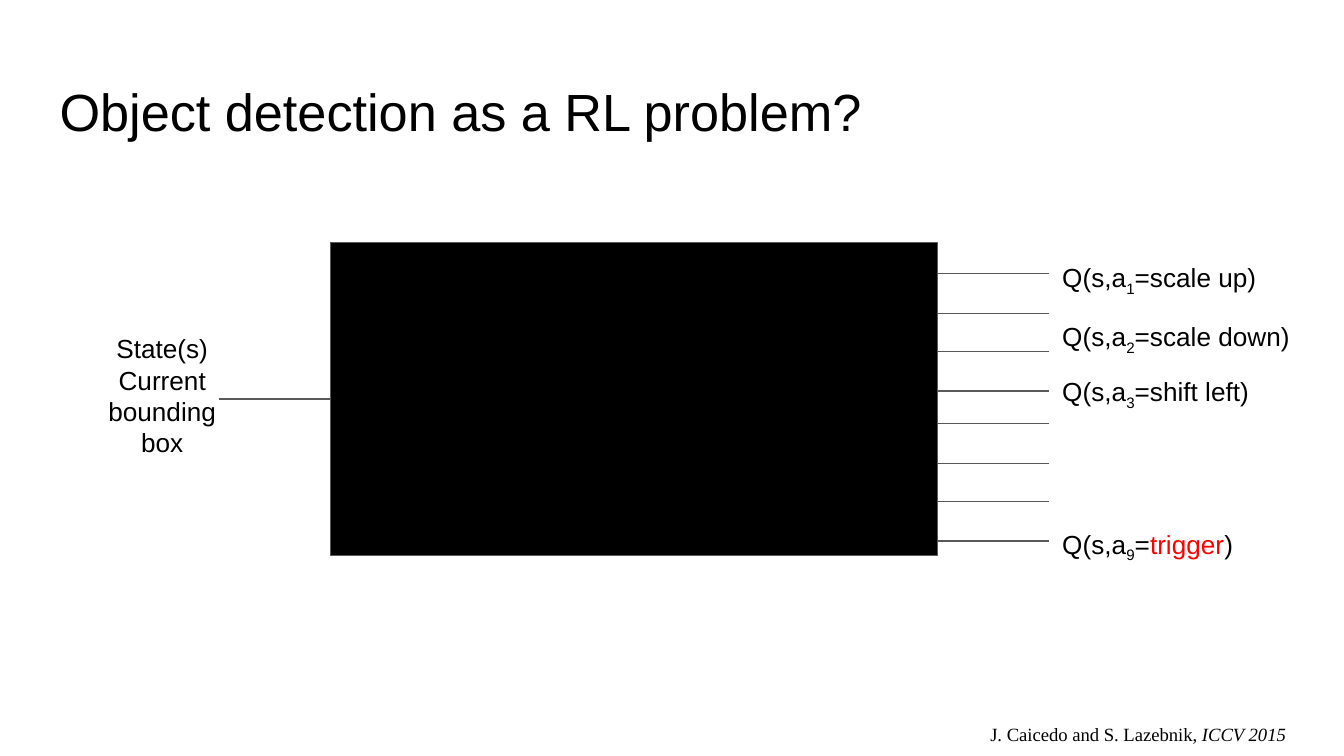
from copy import deepcopy
from dataclasses import dataclass
from itertools import product

from lxml.etree import SubElement
from pptx import Presentation
from pptx.dml.color import RGBColor
from pptx.enum.shapes import MSO_CONNECTOR, MSO_SHAPE
from pptx.enum.text import MSO_ANCHOR, PP_ALIGN
from pptx.oxml.ns import qn
from pptx.util import Pt

PX = 4572


@dataclass(frozen=True)
class Theme:
    """Hold the colours, fonts and sizes of the slide."""
    ink: RGBColor = RGBColor(0, 0, 0)
    rule: RGBColor = RGBColor(0x59, 0x59, 0x59)
    accent: RGBColor = RGBColor(0xFF, 0, 0)
    sans: str = "Arial"
    serif: str = "Times New Roman"
    title: Pt = Pt(28)
    label: Pt = Pt(14)
    credit: Pt = Pt(10)
    stroke: Pt = Pt(0.75)


THEME = Theme()
SUBSCRIPT = {"baseline": "-25000"}


def emu(*lengths):
    """Turn px lengths into EMU."""
    return [length * PX for length in lengths]


def add_text(slide, box, parts, size, font=THEME.sans, align=PP_ALIGN.LEFT,
             anchor=MSO_ANCHOR.TOP):
    """Write one paragraph of (text, font values, run attributes) parts."""
    frame = slide.shapes.add_textbox(*emu(*box)).text_frame
    settings = {"word_wrap": True, "vertical_anchor": anchor}
    settings |= dict.fromkeys(
        ("margin_left", "margin_top", "margin_right", "margin_bottom"), 20 * PX)
    for name, value in settings.items():
        setattr(frame, name, value)
    paragraph = frame.paragraphs[0]
    paragraph.alignment = align
    for text, values, attributes in parts:
        color = values.get("color", THEME.ink)
        style = {"name": font, "size": size, "italic": values.get("italic")}
        for index, line in enumerate(text.split("\n")):
            if index:
                paragraph.add_line_break()
                paragraph._p[-1].append(deepcopy(run._r.rPr))
            run = paragraph.add_run()
            run.text = line
            for name, value in style.items():
                setattr(run.font, name, value)
            run.font.color.rgb = color
            for name, value in attributes.items():
                run._r.rPr.set(name, value)


def add_wire(slide, left, right, y):
    """Draw a level line from right to left."""
    wire = slide.shapes.add_connector(MSO_CONNECTOR.STRAIGHT, *emu(right, y, left, y))
    wire.line.color.rgb = THEME.rule
    wire.line.width = THEME.stroke
    SubElement(wire._element.spPr, qn("a:effectLst"))


def add_title(slide, box):
    """Place the slide title."""
    add_text(slide, box, [("Object detection as a RL problem?", {}, {})], THEME.title)


def add_state(slide, box):
    """Place the input label and its wire to the network."""
    left, top, width, height = box
    add_text(slide, (left, top, 245, 76),
             [("State(s)\nCurrent bounding box", {}, {})], THEME.label,
             align=PP_ALIGN.CENTER)
    add_wire(slide, left + 207, left + width, top + height // 2)


def add_network(slide, box):
    """Draw the black box."""
    network = slide.shapes.add_shape(MSO_SHAPE.ROUNDED_RECTANGLE, *emu(*box))
    network.adjustments[0] = 0
    network.shadow.inherit = False
    network.fill.solid()
    network.fill.fore_color.rgb = THEME.ink
    network.line.color.rgb = THEME.rule
    network.line.width = THEME.stroke


def add_actions(slide, box):
    """Draw two groups of output wires and label the action values."""
    left, top, width, height = box
    labels_left = left + 166
    for group, offset in product((0, 223), (46, 106, 162, 221)):
        add_wire(slide, left, labels_left, top + group + offset)
    actions = [
        (8, "1", "scale up", THEME.ink),
        (96, "2", "scale down", THEME.ink),
        (178, "3", "shift left", THEME.ink),
        (405, "9", "trigger", THEME.accent),
    ]
    for offset, number, action, color in actions:
        parts = [("Q(s,a", {}, {}), (number, {}, SUBSCRIPT), ("=", {}, {}),
                 (action, {"color": color}, {}), (")", {}, {})]
        add_text(slide, (labels_left, top + offset, width - 166, 76), parts, THEME.label)


def add_credit(slide, box):
    """Place the citation."""
    parts = [("J. Caicedo and S. Lazebnik, ", {}, {}),
             ("ICCV 2015", {"italic": True}, {})]
    add_text(slide, box, parts, THEME.credit, THEME.serif, anchor=MSO_ANCHOR.MIDDLE)


def main():
    """Build and save the slide."""
    deck = Presentation()
    deck.slide_width, deck.slide_height = emu(2000, 1125)
    slide = deck.slides.add_slide(deck.slide_layouts[6])
    add_title(slide, (69, 98, 1864, 126))
    add_state(slide, (119, 475, 373, 238))
    add_network(slide, (492, 361, 903, 466))
    add_actions(slide, (1395, 361, 594, 466))
    add_credit(slide, (1454, 1058, 546, 68))
    deck.save("out.pptx")


if __name__ == "__main__":
    main()
